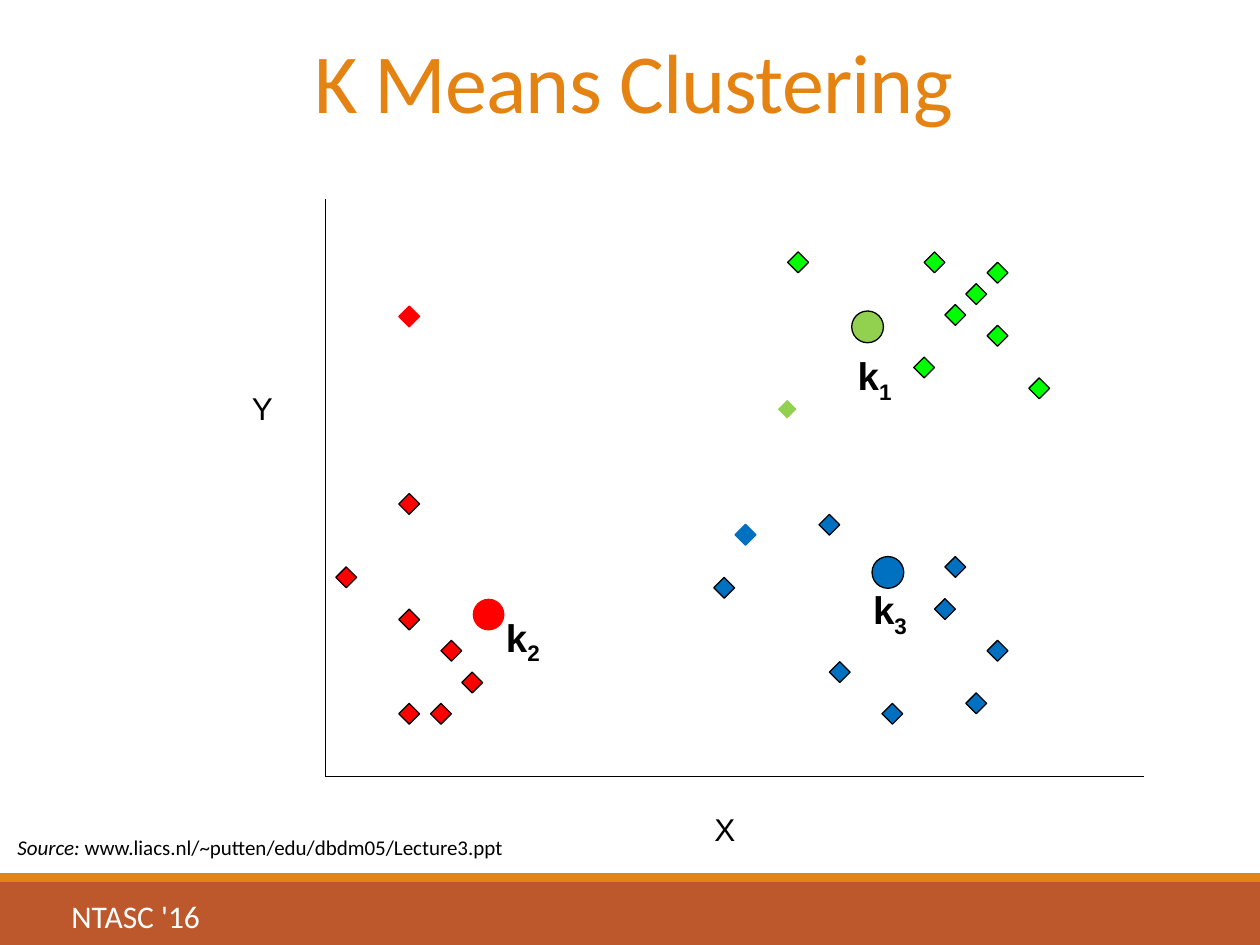
from lxml.etree import SubElement
from pptx import Presentation
from pptx.dml.color import RGBColor as RGB
from pptx.enum.shapes import MSO_CONNECTOR as LINE, MSO_SHAPE as SHAPE
from pptx.enum.text import MSO_ANCHOR as ANCHOR, PP_ALIGN as ALIGN
from pptx.oxml.ns import qn
from pptx.util import Cm, Pt

HUES = {
    "black": "000000", "white": "FFFFFF", "orange": "E48312", "rust": "BD582C",
    "red": "FF0000", "blue": "0070C0", "green": "00FF00", "lime": "92D050",
}
DOT = 0.42
CORE = 0.64

# Left and top of each outlined point, in centimetres
POINTS = {
    "red": [(8.89, 12.91), (9.31, 13.55), (8.68, 14.18), (8.04, 12.28),
            (8.04, 9.95), (8.04, 14.18), (6.77, 11.43)],
    "green": [(18.63, 5.08), (19.9, 5.29), (19.47, 5.72), (19.05, 6.14),
              (19.9, 6.56), (20.74, 7.62), (15.88, 5.08), (18.42, 7.2)],
    "blue": [(16.72, 13.34), (17.78, 14.18), (18.84, 12.07), (16.51, 10.37),
             (14.39, 11.64), (19.9, 12.91), (19.47, 13.97), (19.05, 11.22)],
}
# Points with an outline of their own: left, top, fill, line
MOVED = [(8.04, 6.17, "red", "red"), (14.82, 10.57, "blue", "blue"),
         (15.66, 8.04, "lime", "white")]
# Number, fill, line, place of the centre, place and anchor of its label
MEANS = [
    ("1", "lime", "black", (17.17, 6.27), (17.04, 6.99), ANCHOR.MIDDLE),
    ("3", "blue", "black", (17.58, 11.22), (17.35, 11.71), ANCHOR.MIDDLE),
    ("2", "red", None, (9.53, 12.07), (9.95, 12.27), ANCHOR.MIDDLE),
]


class Board:
    def __init__(self, slide):
        self.shapes = slide.shapes

    def hue(self, name):
        return RGB.from_string(HUES[name])

    def shape(self, kind, x, y, w, h, fill, line=None):
        item = self.shapes.add_shape(kind, Cm(x), Cm(y), Cm(w), Cm(h))
        item.shadow.inherit = False
        item.fill.solid()
        item.fill.fore_color.rgb = self.hue(fill)
        if line:
            item.line.color.rgb = self.hue(line)
            item.line.width = Pt(0.75)
        else:
            item.line.fill.background()

    def dot(self, x, y, fill, line="black"):
        self.shape(SHAPE.DIAMOND, x, y, DOT, DOT, fill, line)

    def axis(self, x1, y1, x2, y2):
        item = self.shapes.add_connector(LINE.STRAIGHT, Cm(x1), Cm(y1), Cm(x2), Cm(y2))
        item.line.color.rgb = self.hue("black")
        item.line.width = Pt(0.75)
        SubElement(item._element.spPr, qn("a:effectLst"))

    def text(self, x, y, w, h, words, size, face="Calibri", hue="black",
             anchor=ANCHOR.TOP, wrap=True):
        """Add one paragraph, one run for each of the words, and return it."""
        frame = self.shapes.add_textbox(Cm(x), Cm(y), Cm(w), Cm(h)).text_frame
        frame.word_wrap = wrap
        frame.vertical_anchor = anchor
        para = frame.paragraphs[0]
        para.font.size = Pt(size)
        para.font.name = face
        para.font.color.rgb = self.hue(hue)
        for word in words:
            para.add_run().text = word
        return para

    def mean(self, num, fill, line, spot, tag, anchor):
        """Add a cluster centre and its label with a subscript number."""
        self.shape(SHAPE.OVAL, *spot, CORE, CORE, fill, line)
        para = self.text(*tag, 1.48, 1.27, ["k", num], 22, "Arial", anchor=anchor)
        para.font.bold = True
        para.runs[1]._r.get_or_add_rPr().set("baseline", "-25000")


def main():
    deck = Presentation()
    deck.slide_width, deck.slide_height = Cm(25.4), Cm(19.05)
    board = Board(deck.slides.add_slide(deck.slide_layouts[6]))

    board.shape(SHAPE.RECTANGLE, 0, 17.78, 25.4, 1.27, "rust")
    board.shape(SHAPE.RECTANGLE, 0, 17.6, 25.4, 0.18, "orange")

    title = board.text(2.29, 0.79, 20.96, 4.04, ["K Means Clustering"], 48, hue="orange")
    title.alignment = ALIGN.CENTER
    title.line_spacing = 0.85
    title.runs[0]._r.get_or_add_rPr().set("spc", "-50")

    for fill, spots in POINTS.items():
        for x, y in spots:
            board.dot(x, y, fill)
    for point in MOVED:
        board.dot(*point)

    board.axis(6.56, 4.02, 6.56, 15.66)
    board.axis(6.56, 15.66, 23.07, 15.66)
    board.text(14.15, 16.21, 1.07, 1.27, ["X"], 18, "Arial", wrap=False)
    board.text(4.83, 7.72, 1.07, 1.27, ["Y"], 18, "Arial", wrap=False)

    for mean in MEANS:
        board.mean(*mean)

    board.text(1.19, 17.93, 7.57, 1.07, ["NTASC '16"], 18, hue="white",
               anchor=ANCHOR.MIDDLE)
    source = board.text(0.1, 16.69, 10.39, 0.76,
                        ["Source: ", "www.liacs.nl/~putten/edu/dbdm05/Lecture3.ppt"],
                        12, wrap=False)
    source.runs[0].font.italic = True

    deck.save("out.pptx")


if __name__ == "__main__":
    main()
